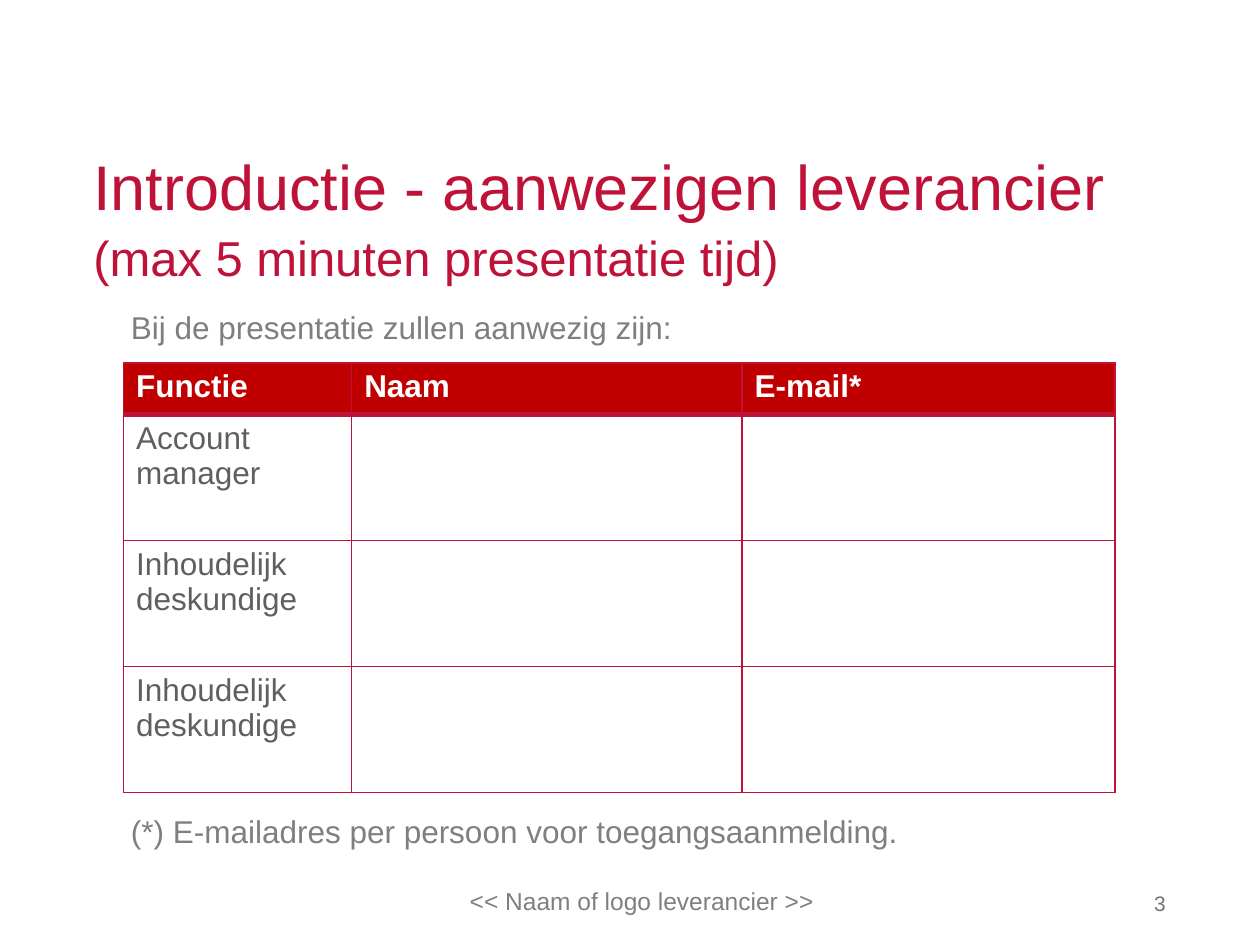
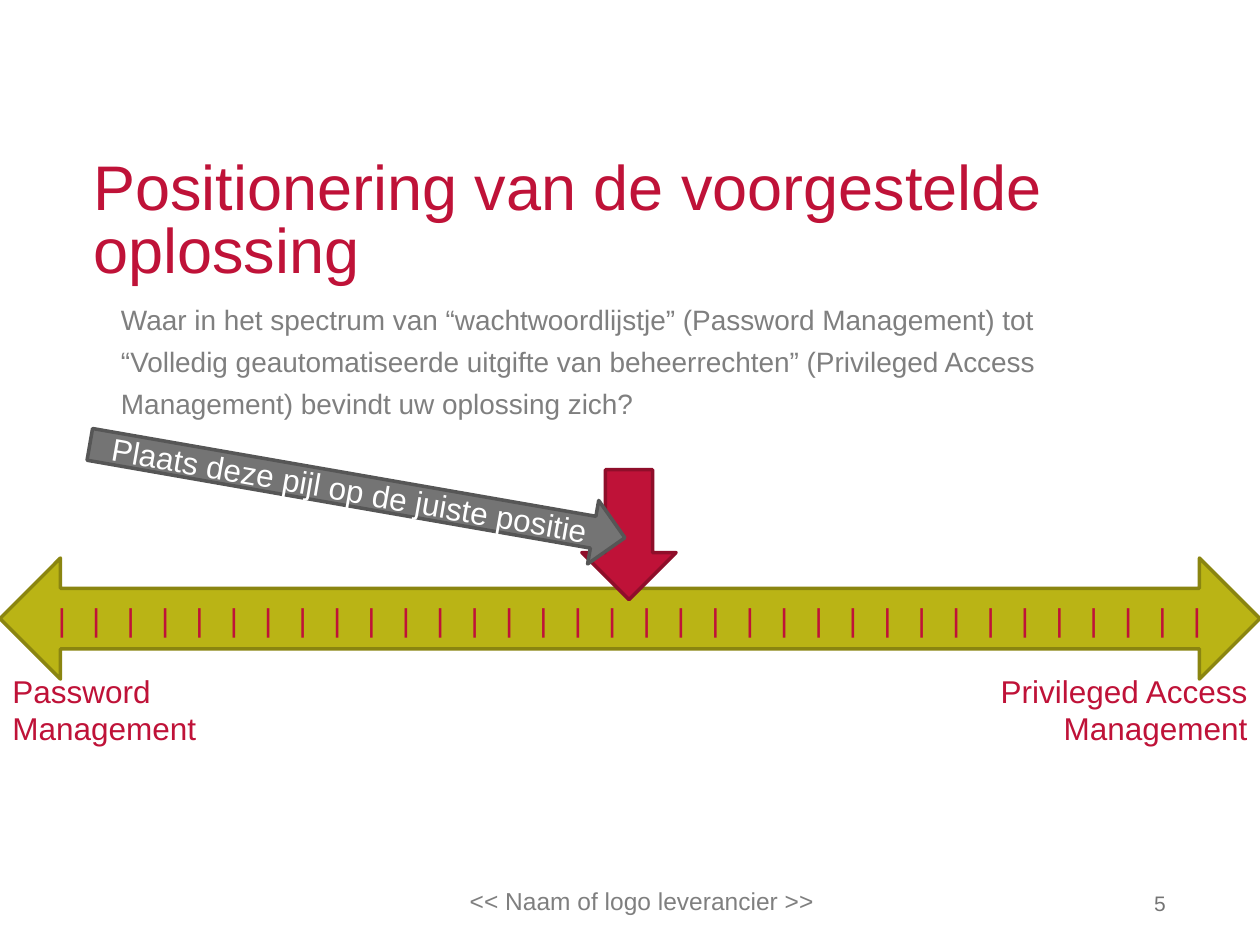
from dataclasses import dataclass
from typing import Any, Optional

from lxml import etree
from pptx import Presentation
from pptx import util as u
from pptx.dml.color import RGBColor
from pptx.enum import shapes, text
from pptx.oxml.ns import qn

CRIMSON = RGBColor(0xBF, 0x12, 0x38)
DARK_CRIMSON = RGBColor(0x8F, 0x0E, 0x2A)
HEADER_RED = RGBColor(0xC0, 0x00, 0x00)
OLIVE = RGBColor(0xBA, 0xB4, 0x15)
DARK_OLIVE = RGBColor(0x8A, 0x85, 0x10)
GREY = RGBColor(0x7F, 0x7F, 0x7F)
MID_GREY = RGBColor(0x74, 0x74, 0x74)
DARK_GREY = RGBColor(0x56, 0x56, 0x56)
CELL_GREY = RGBColor(0x5F, 0x5F, 0x5F)
WHITE = RGBColor(0xFF, 0xFF, 0xFF)

FONT = "Arial"
LEFT, CENTER, RIGHT = text.PP_ALIGN.LEFT, text.PP_ALIGN.CENTER, text.PP_ALIGN.RIGHT
NO_INSETS = (0, 0, 0, 0)
NORMAL_INSETS = (0.25, 0.13, 0.25, 0.13)
BODY_INSETS = (0.74, 0, 0, 0)
SUPPLIER = "<< Naam of logo leverancier >>"
TICK_COUNT = 34
TICK_SPACING = 1500


@dataclass
class Area:
    left: float
    top: float
    width: float
    height: float

    def lengths(self) -> list[u.Cm]:
        return [u.Cm(side) for side in (self.left, self.top, self.width, self.height)]


@dataclass
class Caption:
    area: Area
    lines: list[str]
    size: float
    color: RGBColor
    align: Any = LEFT
    insets: tuple = NORMAL_INSETS
    line_points: Optional[float] = None
    gap_points: float = 0
    wrap: bool = True


@dataclass
class Arrow:
    area: Area
    preset: Any
    fill: RGBColor
    outline: RGBColor
    label: str = ""
    label_color: RGBColor = WHITE
    rotation: float = 0
    letter_spacing: int = 0
    wrap: bool = True


TITLE_AREA = Area(1.88, 3.23, 21.64, 2.54)
SUPPLIER_AREA = Area(9.22, 17.73, 7.47, 0.86)
NUMBER_AREA = Area(22.1, 18.03, 1.4, 0.43)
COLUMN_WIDTHS = [4.6, 7.87, 7.52]
ROW_HEIGHTS = [1.04, 2.54, 2.54, 2.54]
HEADINGS = ["Functie", "Naam", "E-mail*"]
ROLES = ["Account manager", "Inhoudelijk deskundige", "Inhoudelijk deskundige"]


def apply(target: Any, values: dict[str, Any]) -> None:
    for name, value in values.items():
        setattr(target, name, value)


def add_span(para: Any, words: str, size: float, color: RGBColor, bold: bool = False) -> Any:
    span = para.add_run()
    span.text = words
    apply(span.font, {"name": FONT, "size": u.Pt(size), "bold": bold})
    span.font.color.rgb = color
    return span


def set_frame(frame: Any, insets: tuple, anchor: Any, wrap: bool = True) -> None:
    left, top, right, bottom = (u.Cm(inset) for inset in insets)
    apply(frame, {
        "margin_left": left, "margin_top": top, "margin_right": right,
        "margin_bottom": bottom, "vertical_anchor": anchor, "word_wrap": wrap,
        "auto_size": text.MSO_AUTO_SIZE.NONE,
    })


def add_caption(page: Any, caption: Caption) -> None:
    box = page.shapes.add_textbox(*caption.area.lengths())
    frame = box.text_frame
    set_frame(frame, caption.insets, text.MSO_ANCHOR.TOP, caption.wrap)
    for index, line in enumerate(caption.lines):
        para = frame.add_paragraph() if index else frame.paragraphs[0]
        para.alignment = caption.align
        if caption.line_points:
            para.line_spacing = u.Pt(caption.line_points)
        if index and caption.gap_points:
            para.space_before = u.Pt(caption.gap_points)
        add_span(para, line, caption.size, caption.color)


def add_arrow(page: Any, arrow: Arrow) -> None:
    shape = page.shapes.add_shape(arrow.preset, *arrow.area.lengths())
    shape.shadow.inherit = False
    shape.rotation = arrow.rotation
    shape.fill.solid()
    shape.fill.fore_color.rgb = arrow.fill
    shape.line.color.rgb = arrow.outline
    shape.line.width = u.Pt(2)
    if arrow.label:
        set_frame(shape.text_frame, NORMAL_INSETS, text.MSO_ANCHOR.MIDDLE, arrow.wrap)
        para = shape.text_frame.paragraphs[0]
        para.alignment = CENTER
        span = add_span(para, arrow.label, 18, arrow.label_color)
        if arrow.letter_spacing:
            span.font._element.set("spc", str(arrow.letter_spacing))


def add_page(deck: Any, title: str, number: int, subtitle: str = "") -> Any:
    page = deck.slides.add_slide(deck.slide_layouts[5])
    heading = page.shapes.title
    left, top, width, height = TITLE_AREA.lengths()
    apply(heading, {"left": left, "top": top, "width": width, "height": height})
    set_frame(heading.text_frame, NO_INSETS, text.MSO_ANCHOR.TOP)
    para = heading.text_frame.paragraphs[0]
    apply(para, {"alignment": LEFT, "line_spacing": u.Pt(36)})
    add_span(para, title, 36, CRIMSON)
    if subtitle:
        para.add_line_break()
        add_span(para, subtitle, 28, CRIMSON)
    add_caption(page, Caption(SUPPLIER_AREA, [SUPPLIER], 14, GREY, wrap=False))
    add_caption(page, Caption(NUMBER_AREA, [str(number)], 12, MID_GREY, RIGHT,
                              NO_INSETS, line_points=12))
    return page


def set_borders(cell: Any, bottom_points: float) -> None:
    properties = cell._tc.get_or_add_tcPr()
    widths = {"a:lnL": 1, "a:lnR": 1, "a:lnT": 1, "a:lnB": bottom_points}
    for index, (side, points) in enumerate(widths.items()):
        line = etree.Element(qn(side), w=str(u.Pt(points)))
        fill = etree.SubElement(line, qn("a:solidFill"))
        etree.SubElement(fill, qn("a:srgbClr"), val=str(CRIMSON))
        properties.insert(index, line)


def add_attendee_table(page: Any) -> None:
    rows = [HEADINGS] + [[role, "", ""] for role in ROLES]
    area = Area(2.49, 7.32, sum(COLUMN_WIDTHS), sum(ROW_HEIGHTS))
    table = page.shapes.add_table(len(rows), len(HEADINGS), *area.lengths()).table
    table.horz_banding = False
    for column, width in zip(table.columns, COLUMN_WIDTHS):
        column.width = u.Cm(width)
    for row_index, (row, height) in enumerate(zip(table.rows, ROW_HEIGHTS)):
        row.height = u.Cm(height)
        is_header = row_index == 0
        for cell, words in zip(row.cells, rows[row_index]):
            if is_header:
                cell.fill.solid()
                cell.fill.fore_color.rgb = HEADER_RED
            else:
                cell.fill.background()
            set_borders(cell, 3 if is_header else 1)
            if words:
                add_span(cell.text_frame.paragraphs[0], words, 18,
                         WHITE if is_header else CELL_GREY, is_header)


def build_introduction(deck: Any) -> None:
    page = add_page(deck, "Introductie - aanwezigen leverancier", 3,
                    "(max 5 minuten presentatie tijd)")
    add_caption(page, Caption(
        Area(1.9, 6.12, 20.6, 1.19),
        ["Bij de presentatie zullen aanwezig zijn:",
         "(*) E-mailadres per persoon voor toegangsaanmelding."],
        18, GREY, insets=BODY_INSETS, line_points=24, gap_points=264))
    add_attendee_table(page)


def build_positioning(deck: Any) -> None:
    page = add_page(deck, "Positionering van de voorgestelde oplossing", 5)
    question = (
        "Waar in het spectrum van “wachtwoordlijstje” (Password Management) tot "
        "“Volledig geautomatiseerde uitgifte van beheerrechten” (Privileged Access "
        "Management) bevindt uw oplossing zich?"
    )
    add_caption(page, Caption(Area(1.7, 5.92, 20.6, 2.82), [question], 16, GREY,
                              insets=BODY_INSETS, line_points=24))
    add_arrow(page, Arrow(Area(0, 11.25, 25.4, 2.44), shapes.MSO_SHAPE.LEFT_RIGHT_ARROW,
                          OLIVE, DARK_OLIVE, "|" * TICK_COUNT, CRIMSON,
                          letter_spacing=TICK_SPACING, wrap=False))
    add_caption(page, Caption(Area(0, 13.41, 4.5, 1.8), ["Password", "Management"],
                              18, CRIMSON))
    add_caption(page, Caption(Area(19.89, 13.41, 5.51, 1.8),
                              ["Privileged Access Management"], 18, CRIMSON, RIGHT))
    add_arrow(page, Arrow(Area(11.73, 9.47, 1.9, 2.62), shapes.MSO_SHAPE.DOWN_ARROW,
                          CRIMSON, DARK_CRIMSON))
    add_arrow(page, Arrow(Area(1.73, 9.25, 10.95, 1.3), shapes.MSO_SHAPE.RIGHT_ARROW,
                          MID_GREY, DARK_GREY, "Plaats deze pijl op de juiste positie",
                          rotation=9.9))


def main() -> None:
    deck = Presentation()
    apply(deck, {"slide_width": u.Cm(25.4), "slide_height": u.Cm(19.05)})
    build_introduction(deck)
    build_positioning(deck)
    deck.save("out.pptx")


if __name__ == "__main__":
    main()
